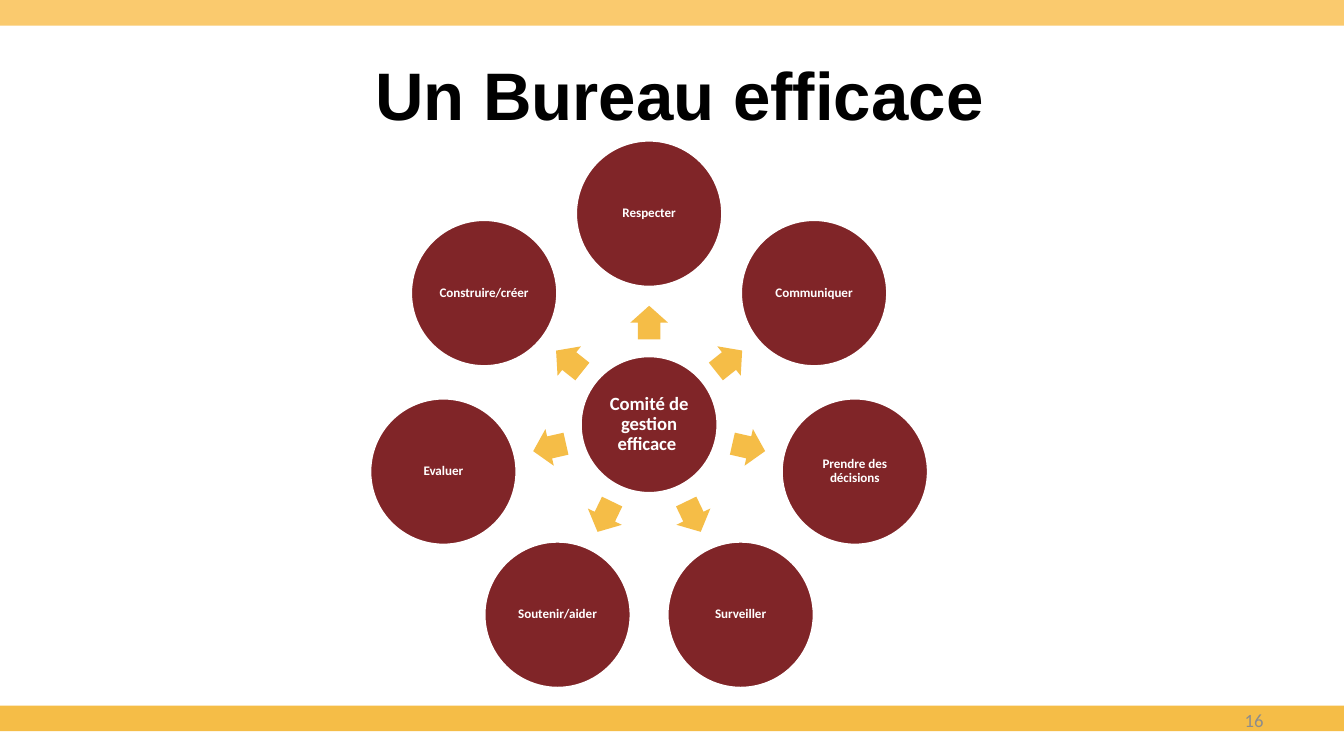
"""Build the slide "Un Bureau efficace": a committee hub with seven radiating roles."""
from math import cos, radians, sin

from pptx import Presentation
from pptx.dml.color import RGBColor
from pptx.enum.shapes import MSO_SHAPE
from pptx.enum.text import MSO_ANCHOR, PP_ALIGN
from pptx.util import Inches, Pt

RECTANGLE, OVAL, ARROW = MSO_SHAPE.RECTANGLE, MSO_SHAPE.OVAL, MSO_SHAPE.RIGHT_ARROW
MIDDLE, CENTER, RIGHT = MSO_ANCHOR.MIDDLE, PP_ALIGN.CENTER, PP_ALIGN.RIGHT
MAROON, GOLD, PALE_GOLD = "802528", "F5BD47", "FACA6E"
WHITE, BLACK, GREY = "FFFFFF", "000000", "8C8C8C"
HUB_X, HUB_Y = 4.83, 3.16
ROLE_RADIUS, ARROW_RADIUS = 1.57, 0.76
ROLES = ["Respecter", "Communiquer", "Prendre des décisions", "Surveiller",
         "Soutenir/aider", "Evaluer", "Construire/créer"]


def add_filled(shapes, kind, box, fill, outline=None):
    shape = shapes.add_shape(kind, *map(Inches, box))
    shape.shadow.inherit = False
    shape.fill.solid()
    shape.fill.fore_color.rgb = RGBColor.from_string(fill)
    if outline:
        shape.line.color.rgb = RGBColor.from_string(outline)
        shape.line.width = Pt(2)
    else:
        shape.line.fill.background()
    return shape


def write(shape, text, size, color, align=CENTER, font="Calibri", bold=True):
    frame = shape.text_frame
    frame.word_wrap, frame.vertical_anchor = True, MIDDLE
    paragraph = frame.paragraphs[0]
    paragraph.alignment = align
    run = paragraph.add_run()
    run.text = text
    for name, value in {"name": font, "size": Pt(size), "bold": bold}.items():
        setattr(run.font, name, value)
    run.font.color.rgb = RGBColor.from_string(color)


prs = Presentation()
prs.slide_width, prs.slide_height = Inches(10), Inches(10 * 9 / 16)
slide = prs.slides.add_slide(prs.slide_layouts[5])

for top, bar_color in [(5.25, GOLD), (0, PALE_GOLD)]:
    add_filled(slide.shapes, RECTANGLE, (0, top, 10, 0.19), bar_color)

title = slide.shapes.title
title.left, title.top, title.width, title.height = map(Inches, (0.75, 0.23, 8.75, 0.94))
write(title, "Un Bureau efficace ", 36, BLACK, font="Arial")

page_number = slide.shapes.add_textbox(*map(Inches, (7.17, 5.21, 2.33, 0.3)))
write(page_number, "16", 10, GREY, align=RIGHT, bold=False)

diagram = slide.shapes.add_group_shape().shapes
circles = [("Comité de gestion efficace ", HUB_X, HUB_Y, 1.03, 10)]
for index, role in enumerate(ROLES):
    angle = index * 360 / len(ROLES) - 90
    across, down = cos(radians(angle)), sin(radians(angle))
    circles.append((role, HUB_X + ROLE_RADIUS * across, HUB_Y + ROLE_RADIUS * down, 1.1, 7))
    arrow_box = (HUB_X + ARROW_RADIUS * across - 0.25 / 2,
                 HUB_Y + ARROW_RADIUS * down - 0.28 / 2, 0.25, 0.28)
    arrow = add_filled(diagram, ARROW, arrow_box, GOLD)
    arrow.adjustments[0], arrow.adjustments[1] = 0.6, 0.5
    arrow.rotation = angle % 360

for label, x, y, diameter, size in circles:
    box = (x - diameter / 2, y - diameter / 2, diameter, diameter)
    circle = add_filled(diagram, OVAL, box, MAROON, WHITE)
    for side in ("left", "top", "right", "bottom"):
        setattr(circle.text_frame, f"margin_{side}", Inches(0.01))
    write(circle, label, size, WHITE)
    circle.text_frame.paragraphs[0].line_spacing = 0.9

prs.save("out.pptx")
